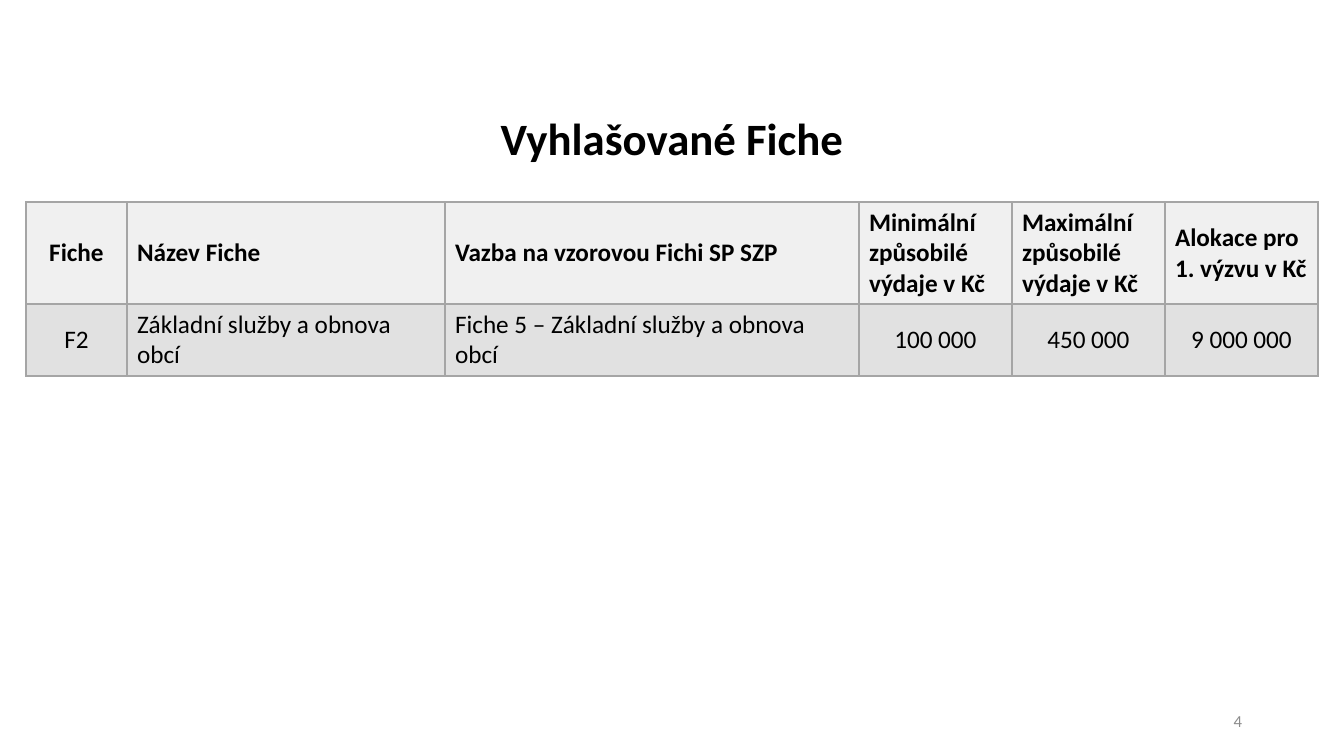
"""Build the slide that lists the announced Fiche and their budgets."""
from dataclasses import dataclass

from lxml.etree import SubElement
from pptx import Presentation
from pptx.dml.color import RGBColor
from pptx.enum.text import MSO_ANCHOR, PP_ALIGN
from pptx.oxml.ns import qn
from pptx.util import Emu, Pt

TITLE = "Vyhlašované Fiche"
PAGE_NUMBER = "4"
HEADERS = [
    "Fiche",
    "Název Fiche",
    "Vazba na vzorovou Fichi SP SZP",
    "Minimální způsobilé výdaje v Kč",
    "Maximální způsobilé výdaje v Kč",
    "Alokace pro 1. výzvu v Kč",
]
FICHE = [
    "F2",
    "Základní služby a obnova obcí",
    "Fiche 5 – Základní služby a obnova obcí",
    "100 000",
    "450 000",
    "9 000 000",
]
LEFT, CENTER, RIGHT = PP_ALIGN.LEFT, PP_ALIGN.CENTER, PP_ALIGN.RIGHT
HEADER_ALIGNS = [CENTER] + [LEFT] * 5
FICHE_ALIGNS = [CENTER, LEFT, LEFT] + [CENTER] * 3

PAGE_SIZE = (1344, 756)
TITLE_AREA = (430, 103, 484, 76)
NUMBER_AREA = (950, 701, 302, 40)
TABLE_ORIGIN = (26, 202)
COLUMN_WIDTHS = [101, 318, 414, 153, 153, 153]
ROW_HEIGHTS = [102, 72]


@dataclass(frozen=True)
class Theme:
    """Colours, font and type sizes of the slide."""

    font: str = "Calibri"
    ink: str = "000000"
    muted: str = "8C8C8C"
    border: str = "A5A5A5"
    header_fill: str = "F0F0F0"
    fiche_fill: str = "E1E1E1"
    title_size: int = 32
    table_size: int = 18
    number_size: int = 12
    border_width: int = 1


THEME = Theme()


def px(length):
    """Turn pixels into EMU."""
    return Emu(round(length * 914400 / 100.8))


def write(frame, text, size, color, align, bold=False):
    """Put one formatted run into the first paragraph of a frame."""
    para = frame.paragraphs[0]
    para.alignment = align
    span = para.add_run()
    span.text = text
    span.font.name = THEME.font
    span.font.size = Pt(size)
    span.font.bold = bold
    span.font.color.rgb = RGBColor.from_string(color)
    return para


def add_text(page, area, *style):
    """Add a wrapped, vertically centred text box."""
    box = page.shapes.add_textbox(*map(px, area))
    box.text_frame.word_wrap = True
    box.text_frame.vertical_anchor = MSO_ANCHOR.MIDDLE
    return write(box.text_frame, *style)


def add_borders(cell):
    """Draw a thin line on each side of a cell."""
    properties = cell._tc.get_or_add_tcPr()
    for side in ("a:lnL", "a:lnR", "a:lnT", "a:lnB"):
        line = SubElement(properties, qn(side), w=str(Pt(THEME.border_width)))
        fill = SubElement(line, qn("a:solidFill"))
        SubElement(fill, qn("a:srgbClr"), val=THEME.border)


def add_fiche_table(page):
    """Add the table with its header row and Fiche row."""
    rows = [
        (HEADERS, HEADER_ALIGNS, THEME.header_fill, True),
        (FICHE, FICHE_ALIGNS, THEME.fiche_fill, False),
    ]
    size = (sum(COLUMN_WIDTHS), sum(ROW_HEIGHTS))
    table = page.shapes.add_table(
        len(rows), len(HEADERS), *map(px, TABLE_ORIGIN + size)
    ).table
    for column, width in zip(table.columns, COLUMN_WIDTHS):
        column.width = px(width)
    for row, height, (texts, aligns, fill, bold) in zip(table.rows, ROW_HEIGHTS, rows):
        row.height = px(height)
        for cell, text, align in zip(row.cells, texts, aligns):
            add_borders(cell)
            cell.fill.solid()
            cell.fill.fore_color.rgb = RGBColor.from_string(fill)
            cell.vertical_anchor = MSO_ANCHOR.MIDDLE
            write(cell.text_frame, text, THEME.table_size, THEME.ink, align, bold)


def main():
    """Compose the slide and save the deck."""
    deck = Presentation()
    deck.slide_width, deck.slide_height = map(px, PAGE_SIZE)
    page = deck.slides.add_slide(deck.slide_layouts[6])
    title = add_text(
        page, TITLE_AREA, TITLE, THEME.title_size, THEME.ink, CENTER, True
    )
    title.line_spacing = 0.9
    add_fiche_table(page)
    add_text(page, NUMBER_AREA, PAGE_NUMBER, THEME.number_size, THEME.muted, RIGHT)
    deck.save("out.pptx")


if __name__ == "__main__":
    main()
